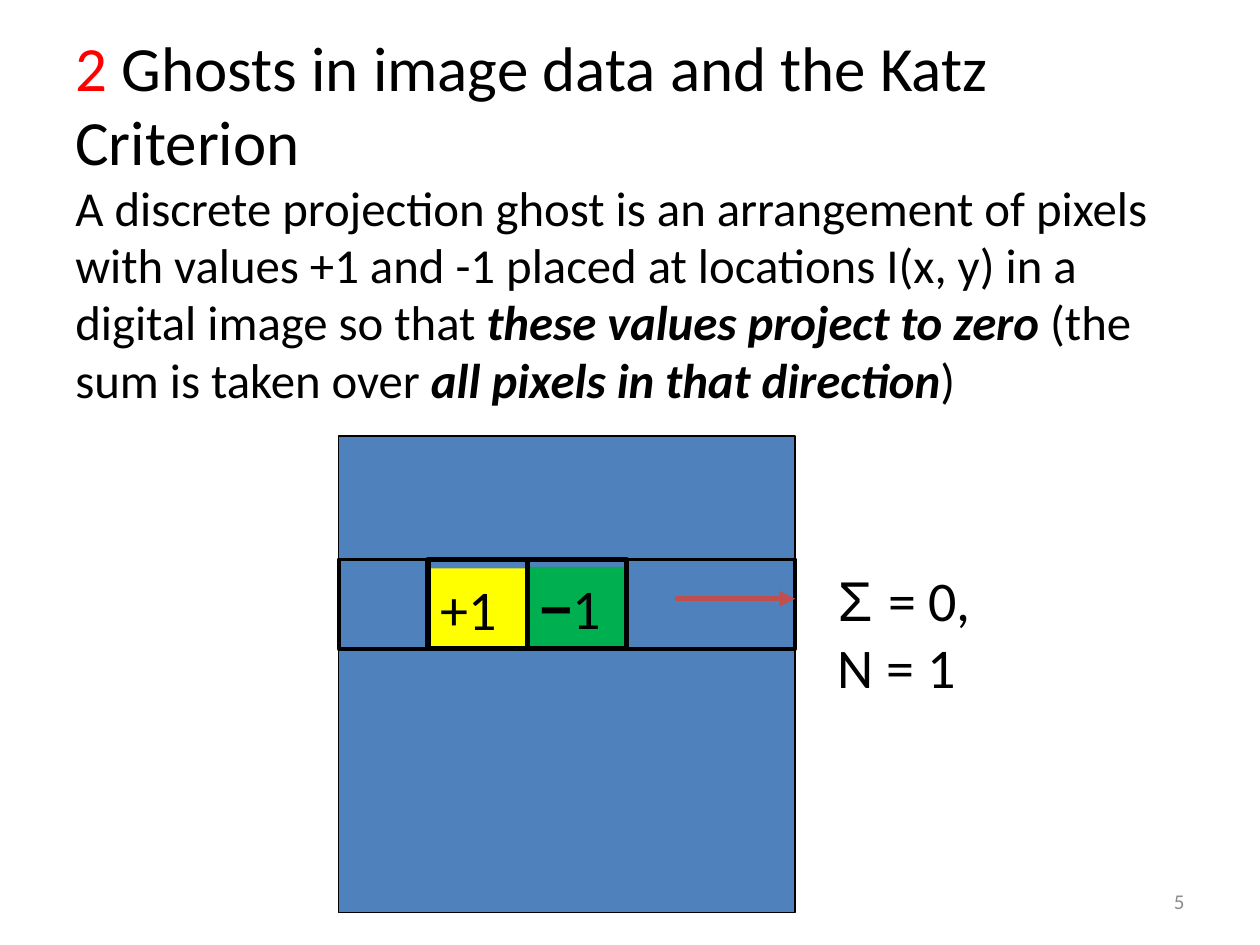
from lxml import etree
from pptx import Presentation
from pptx.dml.color import RGBColor
from pptx.enum.shapes import MSO_CONNECTOR as Connector, MSO_SHAPE as Shape
from pptx.enum.text import MSO_ANCHOR as Anchor, PP_ALIGN as Align
from pptx.oxml.ns import qn
from pptx.util import Cm, Pt

BLACK = RGBColor(0x00, 0x00, 0x00)
RED = RGBColor(0xFF, 0x00, 0x00)
GRAY = RGBColor(0x8C, 0x8C, 0x8C)
BLUE = RGBColor(0x4F, 0x81, 0xBD)
YELLOW = RGBColor(0xFF, 0xFF, 0x00)
GREEN = RGBColor(0x00, 0xB0, 0x50)
BRICK = RGBColor(0xC0, 0x50, 0x4D)

IMAGE_LEFT, IMAGE_WIDTH = 6.83, 9.2
ROW_TOP, ROW_HEIGHT = 11.28, 1.8
PIXEL_LEFT, PIXEL_WIDTH = 8.63, 2.0


def add_span(para, text, size, font="Calibri", color=BLACK, strong=False, italic=False):
    span = para.add_run()
    span.text = text
    span.font.size = Pt(size)
    span.font.name = font
    span.font.color.rgb = color
    span.font.bold = strong
    span.font.italic = italic


def add_text_box(page, left, top, width, height, anchor=Anchor.TOP):
    """Add a wrapping text box and return its first paragraph."""
    box = page.shapes.add_textbox(Cm(left), Cm(top), Cm(width), Cm(height))
    box.text_frame.word_wrap = True
    box.text_frame.vertical_anchor = anchor
    return box.text_frame.paragraphs[0]


def add_box(page, left, top, width, height, fill=None, line_width=None):
    box = page.shapes.add_shape(
        Shape.RECTANGLE, Cm(left), Cm(top), Cm(width), Cm(height))
    box.shadow.inherit = False
    if fill is None:
        box.fill.background()
    else:
        box.fill.solid()
        box.fill.fore_color.rgb = fill
    if line_width is None:
        box.line.fill.background()
    else:
        box.line.color.rgb = BLACK
        box.line.width = Pt(line_width)
    return box


def add_pixel_value(page, left, top, fill, spans):
    """Add a filled pixel holding (text, font, strong) spans."""
    box = add_box(page, left, top, PIXEL_WIDTH, 1.6, fill)
    box.text_frame.word_wrap = True
    box.text_frame.vertical_anchor = Anchor.TOP
    para = box.text_frame.paragraphs[0]
    para.alignment = Align.LEFT
    for text, font, strong in spans:
        add_span(para, text, 32, font, strong=strong)


def add_arrow(page, left, right, y):
    arrow = page.shapes.add_connector(
        Connector.STRAIGHT, Cm(left), Cm(y), Cm(right), Cm(y))
    arrow.line.color.rgb = BRICK
    arrow.line.width = Pt(3)
    etree.SubElement(arrow.line._get_or_add_ln(), qn("a:tailEnd"), type="triangle")
    etree.SubElement(arrow._element.spPr, qn("a:effectLst"))


def add_heading(page):
    para = add_text_box(page, 1.27, 0.76, 22.81, 7.39, Anchor.MIDDLE)
    para.line_spacing = 0.98
    add_span(para, "2", 36, color=RED)
    add_span(para, " Ghosts in image data and the Katz Criterion", 36)
    para.add_line_break()
    definition = [
        ("A discrete projection ghost is an arrangement of pixels with values +1 "
         "and -1 placed at locations I(x, y) in a digital image so that ", False),
        ("these values project to zero", True),
        (" (the sum is taken over ", False),
        ("all pixels in that direction", True),
        (")", False),
    ]
    for text, stressed in definition:
        add_span(para, text, 27.9, strong=stressed, italic=stressed)


def add_ghost_diagram(page):
    add_box(page, IMAGE_LEFT, 8.79, IMAGE_WIDTH, 9.6, BLUE, 0.75)
    add_box(page, IMAGE_LEFT, ROW_TOP, IMAGE_WIDTH, ROW_HEIGHT, BLUE, 2.25)
    add_arrow(page, 13.61, IMAGE_LEFT + IMAGE_WIDTH, 12.07)

    total = add_text_box(page, 16.64, ROW_TOP, 3.99, 3.0)
    add_span(total, "Σ ", 32, "Arial")
    add_span(total, "= 0, N = 1", 32)

    pixel_lefts = [PIXEL_LEFT, PIXEL_LEFT + PIXEL_WIDTH]
    add_pixel_value(page, pixel_lefts[0], 11.46, YELLOW, [("+1", "Calibri", False)])
    add_pixel_value(page, pixel_lefts[1], 11.43, GREEN,
                    [("−", "Arial", True), ("1", "Calibri", False)])
    for left in pixel_lefts:
        add_box(page, left, ROW_TOP, PIXEL_WIDTH, ROW_HEIGHT, line_width=3)


def add_page_number(page):
    para = add_text_box(page, 18.2, 17.66, 5.93, 1.01, Anchor.MIDDLE)
    para.alignment = Align.RIGHT
    add_span(para, "5", 12, color=GRAY)


def main():
    deck = Presentation()
    deck.slide_width, deck.slide_height = Cm(25.4), Cm(19.05)
    page = deck.slides.add_slide(deck.slide_layouts[6])
    add_page_number(page)
    add_heading(page)
    add_ghost_diagram(page)
    deck.save("out.pptx")


if __name__ == "__main__":
    main()
